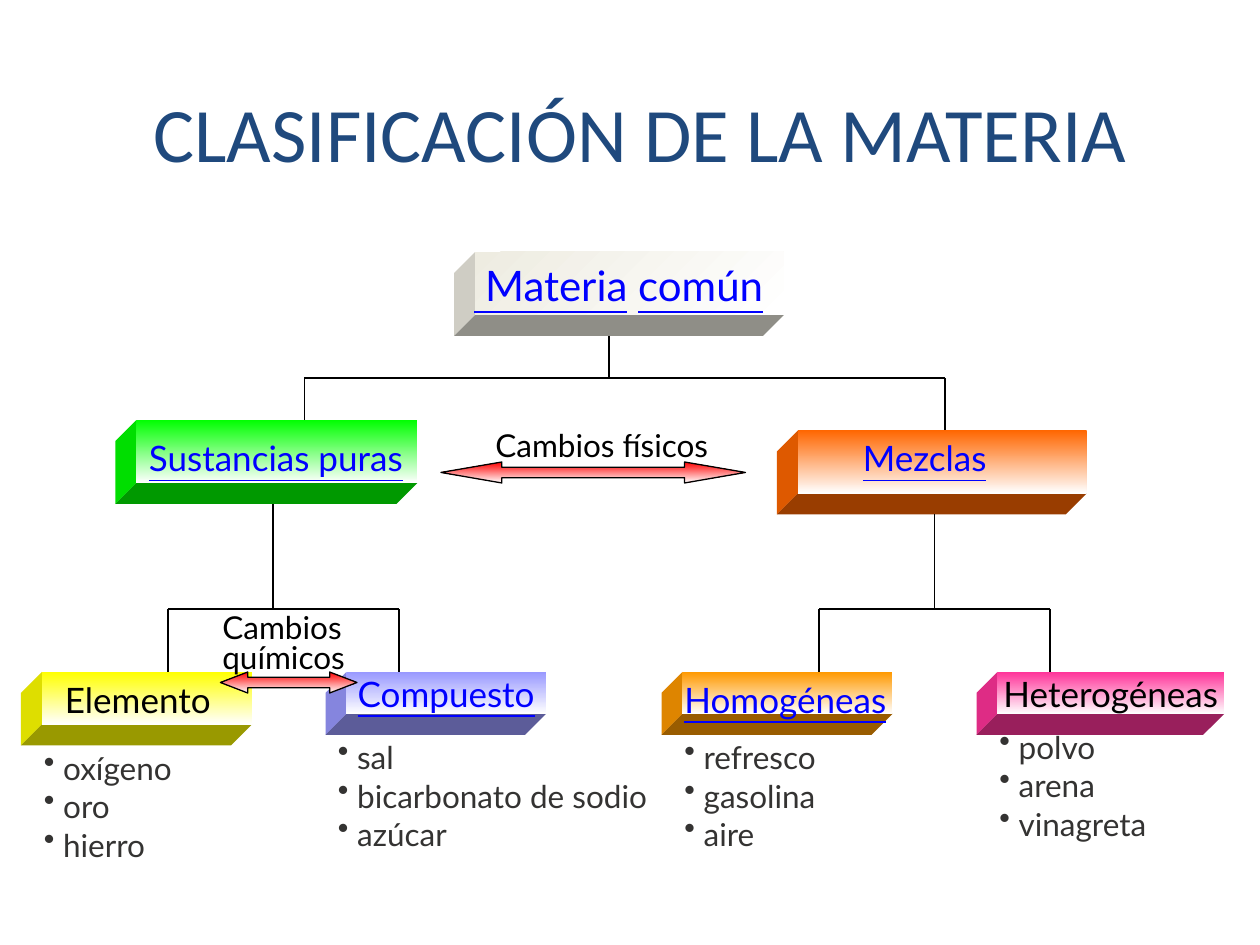
from lxml import etree
from pptx import Presentation
from pptx.dml.color import RGBColor
from pptx.enum.shapes import MSO_CONNECTOR, MSO_SHAPE
from pptx.enum.text import MSO_ANCHOR, PP_ALIGN
from pptx.oxml.ns import qn
from pptx.util import Pt

BLUE, BLACK, GREY, WHITE = "0000FF", "000000", "343332", "FFFFFF"
DEPTH = 12


def paint(fill, first, last=None, angle=270):
    if last is None:
        fill.solid()
        fill.fore_color.rgb = RGBColor.from_string(first)
        return
    fill.gradient()
    fill.gradient_angle = angle
    for stop, tone in zip(fill.gradient_stops, (first, last)):
        stop.color.rgb = RGBColor.from_string(tone)


def write(par, text, size=20, tone=BLACK, face="Lato", under=False):
    run = par.add_run()
    run.text = text
    run.font.size = Pt(size)
    run.font.name = face
    run.font.underline = under
    paint(run.font.fill, tone)


deck = Presentation()
deck.slide_width, deck.slide_height = Pt(720), Pt(540)
slide = deck.slides.add_slide(deck.slide_layouts[5])
shapes = slide.shapes

# Title
title = shapes.title
title.left, title.top, title.width, title.height = Pt(60), Pt(30), Pt(612), Pt(90)
title.text_frame.vertical_anchor = MSO_ANCHOR.MIDDLE
par = title.text_frame.paragraphs[0]
par.alignment = PP_ALIGN.CENTER
write(par, "CLASIFICACIÓN DE LA MATERIA", size=44, tone="1F497D", face="Calibri")

# Blocks with a left and a bottom face: place, colour, angle, label
blocks = [
    (271.5, 144, 176.5, 36, "EEECE1", 315, None, BLUE),
    (78, 240, 160.5, 36, "00FF00", 270, None, BLUE),
    (456, 246, 165, 36, "FF6600", 270, None, BLUE),
    (24, 384, 120, 30, "FFFF00", 270, None, BLACK),
    (198, 384, 114, 24, "9999FF", 270, "Compuesto", BLUE),
    (390, 384, 120, 24, "FF9900", 270, None, BLUE),
    (570, 384, 129.5, 24, "FF3399", 270, "Heterogéneas", BLACK),
]
for x, y, wide, high, tone, angle, label, ink in blocks:
    base, right, back = y + high, x + wide, x - DEPTH
    left_face = [(x, y), (x, base), (back, base + DEPTH), (back, y + DEPTH)]
    low_face = [(x, base), (right, base), (right - DEPTH, base + DEPTH),
                (back, base + DEPTH)]
    for face, share in ((left_face, 0.87), (low_face, 0.6)):
        dots = [(Pt(a), Pt(b)) for a, b in face]
        form = shapes.build_freeform(*dots[0])
        form.add_line_segments(dots[1:], close=True)
        side = form.convert_to_shape()
        side.shadow.inherit = False
        side.line.fill.background()
        parts = [int(tone[i:i + 2], 16) for i in (0, 2, 4)]
        paint(side.fill, "".join(f"{round(p * share):02X}" for p in parts))
    front = shapes.add_shape(MSO_SHAPE.RECTANGLE, Pt(x), Pt(y), Pt(wide), Pt(high))
    front.shadow.inherit = False
    front.line.fill.background()
    paint(front.fill, tone, WHITE, angle)
    if label:
        frame = front.text_frame
        frame.word_wrap = False
        frame.vertical_anchor = MSO_ANCHOR.MIDDLE
        par = frame.paragraphs[0]
        par.alignment = PP_ALIGN.CENTER
        write(par, label, tone=ink, under=ink == BLUE)

# Tree lines
lines = [
    (348, 192, 348, 216), (174, 216, 540, 216),
    (174, 216, 174, 240), (540, 216, 540, 246),
    (156, 288, 156, 348), (96, 348, 228, 348),
    (96, 348, 96, 384), (228, 348, 228, 384),
    (534, 294, 534, 348), (468, 348, 600, 348),
    (468, 348, 468, 384), (600, 348, 600, 384),
]
for ends in lines:
    line = shapes.add_connector(MSO_CONNECTOR.STRAIGHT, *map(Pt, ends))
    paint(line.line.fill, BLACK)
    line.line.width = Pt(0.75)
    etree.SubElement(line._element.spPr, qn("a:effectLst"))

# Double arrows
for x, y, wide, head in ((252, 264, 174, 2.9), (126, 384, 78, 1.3)):
    arrow = shapes.add_shape(MSO_SHAPE.LEFT_RIGHT_ARROW, Pt(x), Pt(y), Pt(wide), Pt(12))
    arrow.adjustments[0], arrow.adjustments[1] = 0.5, head
    arrow.shadow.inherit = False
    paint(arrow.fill, "FF0000", WHITE)
    paint(arrow.line.fill, BLACK)
    arrow.line.width = Pt(0.75)

# Labels: place, line spacing, size, runs
labels = [
    (264, 144.5, 217.5, 36, 1, 24, [(" Materia", BLUE), (" ", BLACK), ("común", BLUE)]),
    (78, 246, 192, 31, 1, 20, [("Sustancias puras", BLUE)]),
    (486, 246, 144, 31, 1, 20, [("Mezclas", BLUE)]),
    (30, 384, 126, 31, 1, 20, [("Elemento", BLACK)]),
    (384, 384, 138, 31, 1, 20, [("Homogéneas", BLUE)]),
    (276, 240, 186, 29, 1, 18, [("Cambios físicos", BLACK)]),
    (120, 348, 120, 42, 0.8, 18, [("Cambios químicos", BLACK)]),
]
for x, y, wide, high, gap, size, runs in labels:
    frame = shapes.add_textbox(Pt(x), Pt(y), Pt(wide), Pt(high)).text_frame
    frame.word_wrap = True
    par = frame.paragraphs[0]
    par.line_spacing = gap
    for text, ink in runs:
        write(par, text, size=size, tone=ink, under=ink == BLUE)

# Example lists
lists = [
    (18, 432, 120, ["oxígeno", "oro", "hierro"]),
    (186, 426, 240, ["sal", "bicarbonato de sodio", "azúcar"]),
    (384, 426, 120, ["refresco", "gasolina", "aire"]),
    (564, 420, 120, ["polvo", "arena", "vinagreta"]),
]
for x, y, wide, items in lists:
    frame = shapes.add_textbox(Pt(x), Pt(y), Pt(wide), Pt(68)).text_frame
    frame.word_wrap = True
    for i, item in enumerate(items):
        par = frame.add_paragraph() if i else frame.paragraphs[0]
        par.line_spacing = 0.6
        if i:
            par.space_before = Pt(9)
        props = par._p.get_or_add_pPr()
        props.set("marL", str(Pt(11)))
        props.set("indent", str(Pt(-11)))
        etree.SubElement(props, qn("a:buChar")).set("char", "•")
        write(par, item, size=18, tone=GREY)

deck.save("out.pptx")
